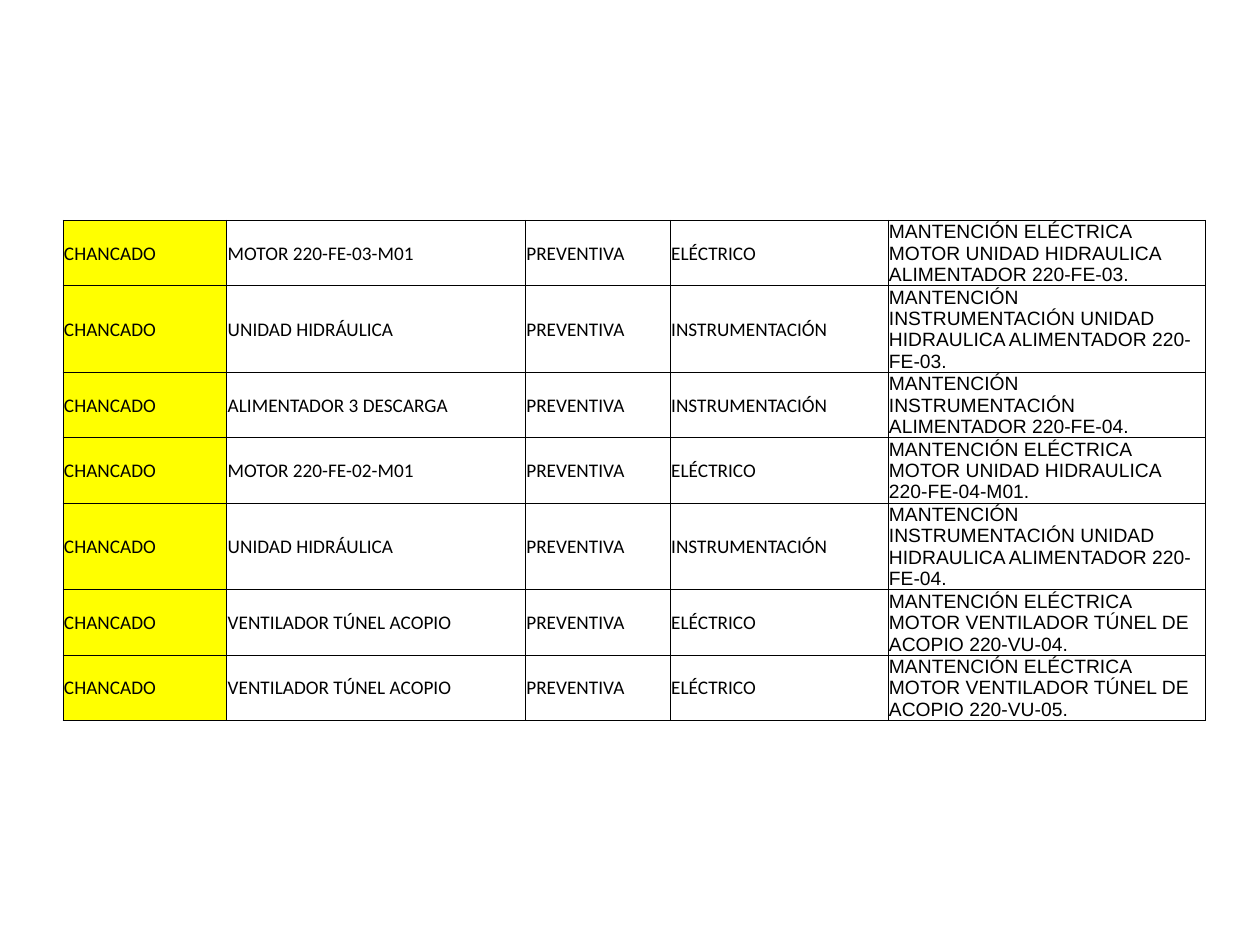
from dataclasses import dataclass

from lxml import etree
from pptx import Presentation
from pptx.dml.color import RGBColor
from pptx.enum.text import MSO_ANCHOR
from pptx.oxml.ns import qn
from pptx.util import Cm, Pt

MIDDLE = MSO_ANCHOR.MIDDLE
BLANK_LAYOUT = 6


@dataclass(frozen=True)
class Theme:
    ink: str = "000000"
    highlight: str = "FFFF00"
    label_font: str = "Calibri"
    task_font: str = "Arial"
    text_size: float = 11
    border_width: float = 0.5


THEME = Theme()

AREA = "CHANCADO"
KIND = "PREVENTIVA"
ELECTRICAL = "ELÉCTRICO"
INSTRUMENTS = "INSTRUMENTACIÓN"
COLUMN_WIDTHS = (3.3, 6.02, 2.92, 4.39, 6.4)
THREE_LINES, FOUR_LINES = 1.3, 1.73

JOBS = (
    ("MOTOR 220-FE-03-M01", ELECTRICAL,
     "MANTENCIÓN ELÉCTRICA MOTOR UNIDAD HIDRAULICA ALIMENTADOR 220-FE-03.", THREE_LINES),
    ("UNIDAD HIDRÁULICA", INSTRUMENTS,
     "MANTENCIÓN INSTRUMENTACIÓN UNIDAD HIDRAULICA ALIMENTADOR 220-FE-03.", FOUR_LINES),
    ("ALIMENTADOR 3 DESCARGA", INSTRUMENTS,
     "MANTENCIÓN INSTRUMENTACIÓN ALIMENTADOR 220-FE-04.", THREE_LINES),
    ("MOTOR 220-FE-02-M01", ELECTRICAL,
     "MANTENCIÓN ELÉCTRICA MOTOR UNIDAD HIDRAULICA 220-FE-04-M01.", THREE_LINES),
    ("UNIDAD HIDRÁULICA", INSTRUMENTS,
     "MANTENCIÓN INSTRUMENTACIÓN UNIDAD HIDRAULICA ALIMENTADOR 220-FE-04.", FOUR_LINES),
    ("VENTILADOR TÚNEL ACOPIO", ELECTRICAL,
     "MANTENCIÓN ELÉCTRICA MOTOR VENTILADOR TÚNEL DE ACOPIO 220-VU-04.", THREE_LINES),
    ("VENTILADOR TÚNEL ACOPIO", ELECTRICAL,
     "MANTENCIÓN ELÉCTRICA MOTOR VENTILADOR TÚNEL DE ACOPIO 220-VU-05.", THREE_LINES),
)


def apply_format(target, values):
    for name, value in values.items():
        setattr(target, name, value)


def add_borders(cell):
    properties = cell._tc.get_or_add_tcPr()
    for side in ("lnL", "lnR", "lnT", "lnB"):
        line = etree.SubElement(properties, qn(f"a:{side}"), w=str(Pt(THEME.border_width)))
        fill = etree.SubElement(line, qn("a:solidFill"))
        etree.SubElement(fill, qn("a:srgbClr"), val=THEME.ink)


def write_cell(cell, text, font_name, fill_color=None):
    apply_format(cell, {
        "vertical_anchor": MIDDLE,
        "margin_left": Cm(0.02),
        "margin_right": Cm(0.02),
        "margin_top": Cm(0.02),
        "margin_bottom": 0,
    })
    add_borders(cell)
    if fill_color:
        cell.fill.solid()
        cell.fill.fore_color.rgb = RGBColor.from_string(fill_color)
    else:
        cell.fill.background()
    span = cell.text_frame.paragraphs[0].add_run()
    span.text = text
    apply_format(span.font, {"name": font_name, "size": Pt(THEME.text_size), "bold": False})
    span.font.color.rgb = RGBColor.from_string(THEME.ink)


def add_job_table(page):
    width = Cm(sum(COLUMN_WIDTHS))
    height = Cm(sum(job[-1] for job in JOBS))
    table = page.shapes.add_table(
        len(JOBS), len(COLUMN_WIDTHS), Cm(1.27), Cm(4.44), width, height).table
    apply_format(table, {"first_row": False, "horz_banding": False})
    for column, column_width in zip(table.columns, COLUMN_WIDTHS):
        column.width = Cm(column_width)
    for row, (equipment, discipline, task, row_height) in zip(table.rows, JOBS):
        row.height = Cm(row_height)
        area_cell, *label_cells, task_cell = row.cells
        write_cell(area_cell, AREA, THEME.label_font, THEME.highlight)
        for cell, text in zip(label_cells, (equipment, KIND, discipline)):
            write_cell(cell, text, THEME.label_font)
        write_cell(task_cell, task, THEME.task_font)


def main():
    deck = Presentation()
    apply_format(deck, {"slide_width": Cm(25.4), "slide_height": Cm(19.05)})
    page = deck.slides.add_slide(deck.slide_layouts[BLANK_LAYOUT])
    add_job_table(page)
    deck.save("out.pptx")


if __name__ == "__main__":
    main()
